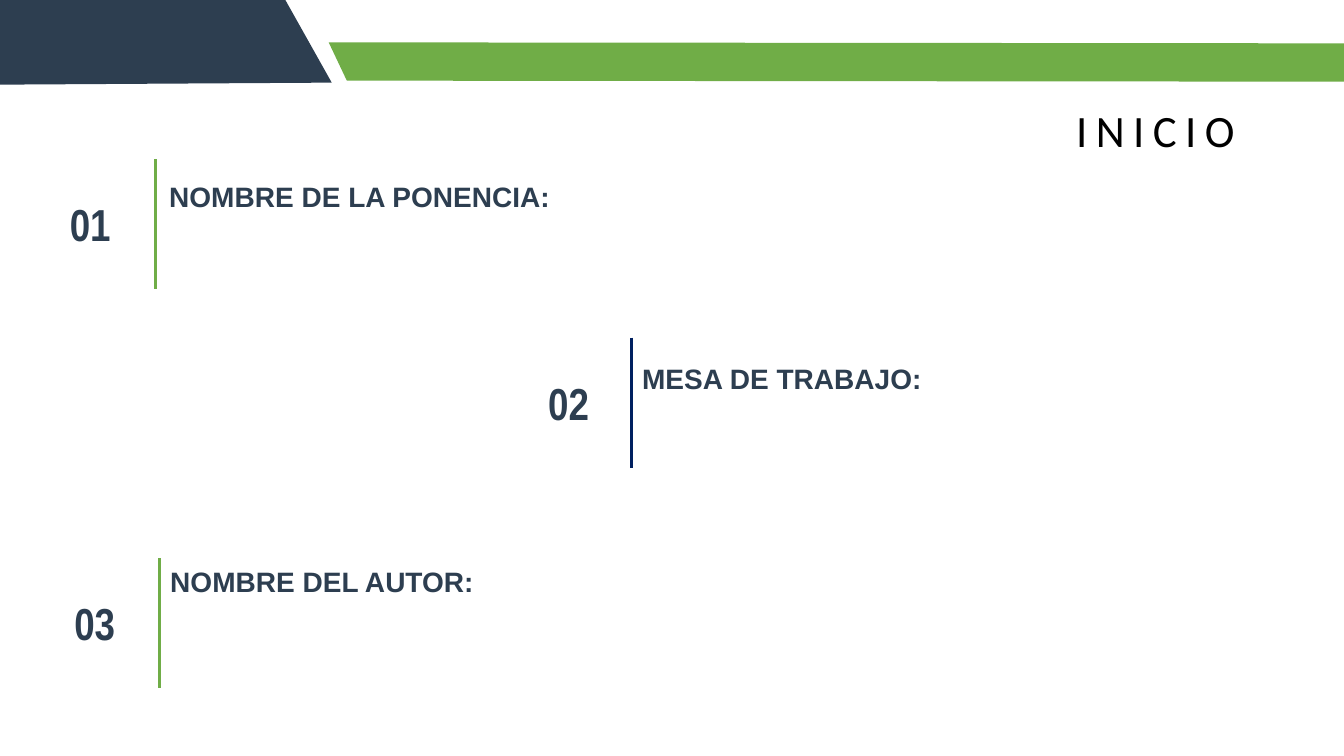
from pptx import Presentation
from pptx.dml.color import RGBColor
from pptx.enum.shapes import MSO_CONNECTOR
from pptx.enum.text import MSO_ANCHOR, MSO_AUTO_SIZE, PP_ALIGN
from pptx.oxml.ns import qn
from pptx.util import Inches, Pt
from lxml import etree

STRAIGHT = MSO_CONNECTOR.STRAIGHT
MIDDLE, BOTTOM = MSO_ANCHOR.MIDDLE, MSO_ANCHOR.BOTTOM
LEFT, CENTER = PP_ALIGN.LEFT, PP_ALIGN.CENTER
NO_FIT = MSO_AUTO_SIZE.NONE

COLORS = {"green": "70AD47", "slate": "2D3E50", "navy": "002060", "black": "000000"}
FORMATS = {
    "title": {"name": "Calibri", "size": Pt(32), "bold": False},
    "number": {"name": "Arial Narrow", "size": Pt(32), "bold": True},
    "heading": {"name": "Arial", "size": Pt(20), "bold": True},
}
GREEN_BAND = [(13.35, 0.43), (3.26, 0.42), (3.44, 0.8), (13.34, 0.81)]
SLATE_CORNER = [(0, 0), (0, 0.84), (3.29, 0.82), (2.83, 0)]
RULE_HEIGHT = 1.29
NUMBER_DROP = 0.07
NUMBER_HEIGHT = 1.14
SECTIONS = [
    ("01", (0.49, 0.81), (1.54, 1.58), "green",
     "NOMBRE DE LA PONENCIA:", (1.58, 1.41, 6.3, 0.75)),
    ("02", (5.18, 0.92), (6.26, 3.35), "navy",
     "MESA DE TRABAJO:", (6.27, 3.35, 6.57, 0.62)),
    ("03", (0.49, 0.9), (1.58, 5.54), "green",
     "NOMBRE DEL AUTOR:", (1.59, 5.36, 6.3, 0.62)),
]


class SlideBuilder:
    def __init__(self, slide, colors, formats):
        self.slide = slide
        self.colors = colors
        self.formats = formats

    def color(self, name):
        return RGBColor.from_string(self.colors[name])

    def fill_text(self, shape, text, style, color, anchor, alignment):
        frame = shape.text_frame
        frame.text = text
        settings = {
            "word_wrap": True, "auto_size": NO_FIT, "vertical_anchor": anchor,
            "margin_left": Inches(0.1), "margin_right": Inches(0.1),
            "margin_top": Inches(0.05), "margin_bottom": Inches(0.05),
        }
        for name, value in settings.items():
            setattr(frame, name, value)
        paragraph = frame.paragraphs[0]
        paragraph.alignment = alignment
        font = paragraph.runs[0].font
        for name, value in self.formats[style].items():
            setattr(font, name, value)
        font.color.rgb = self.color(color)
        return paragraph

    def title(self, text, left, top, width, height):
        shape = self.slide.shapes.title
        shape.left, shape.top = Inches(left), Inches(top)
        shape.width, shape.height = Inches(width), Inches(height)
        paragraph = self.fill_text(shape, text, "title", "black", BOTTOM, CENTER)
        paragraph.line_spacing = 0.9
        paragraph.runs[0]._r.get_or_add_rPr().set("spc", "600")

    def text(self, text, box, style, anchor, alignment):
        shape = self.slide.shapes.add_textbox(*map(Inches, box))
        self.fill_text(shape, text, style, "slate", anchor, alignment)

    def polygon(self, points, color):
        corners = [(Inches(x), Inches(y)) for x, y in points]
        builder = self.slide.shapes.build_freeform(*corners[0])
        builder.add_line_segments(corners[1:], close=True)
        shape = builder.convert_to_shape()
        shape.shadow.inherit = False
        shape.fill.solid()
        shape.fill.fore_color.rgb = self.color(color)
        shape.line.fill.background()

    def rule(self, left, top, height, color):
        connector = self.slide.shapes.add_connector(
            STRAIGHT, Inches(left), Inches(top), Inches(left), Inches(top + height))
        connector.line.color.rgb = self.color(color)
        connector.line.width = Pt(2.25)
        etree.SubElement(connector._element.spPr, qn("a:effectLst"))


def main():
    presentation = Presentation()
    presentation.slide_width = Inches(13.33)
    presentation.slide_height = Inches(7.5)
    slide = presentation.slides.add_slide(presentation.slide_layouts[5])
    builder = SlideBuilder(slide, COLORS, FORMATS)

    builder.polygon(GREEN_BAND, "green")
    builder.polygon(SLATE_CORNER, "slate")
    builder.title("INICIO", 9.57, 0.81, 3.78, 0.8)
    for number, (left, width), (rule_left, top), color, heading, box in SECTIONS:
        number_box = (left, top + NUMBER_DROP, width, NUMBER_HEIGHT)
        builder.text(number, number_box, "number", MIDDLE, CENTER)
        builder.rule(rule_left, top, RULE_HEIGHT, color)
        builder.text(heading, box, "heading", BOTTOM, LEFT)

    presentation.save("out.pptx")


if __name__ == "__main__":
    main()
